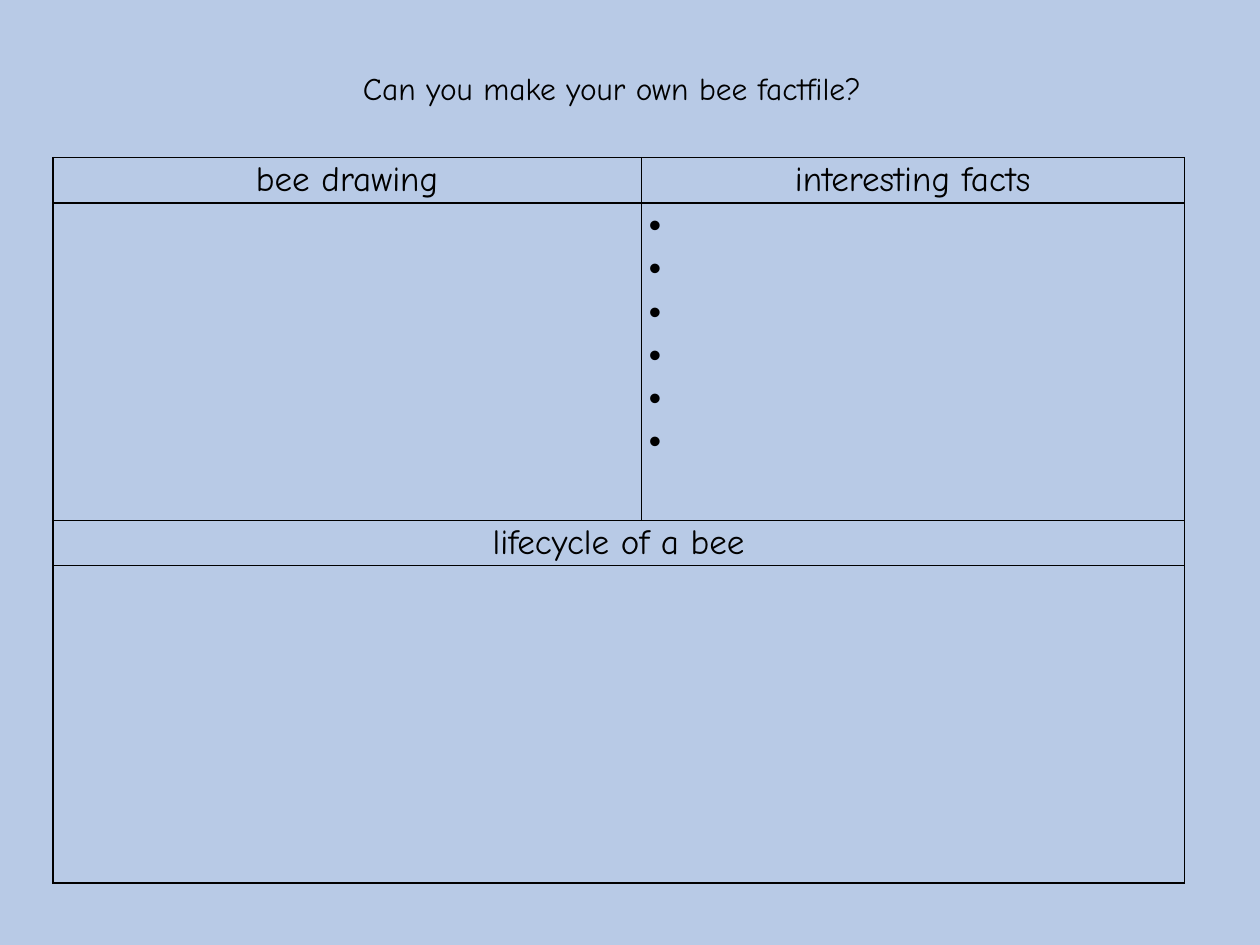
from lxml import etree
from pptx import Presentation
from pptx import util as u
from pptx.dml.color import RGBColor
from pptx.enum import text
from pptx.oxml import ns

TITLE = "Can you make your own bee factfile?"
HEADS = {(0, 0): "bee drawing", (0, 1): "interesting facts", (2, 0): "lifecycle of a bee"}
FACTS = (1, 1)
COUNT = 6
WIDE = (2, 3)
COLS = (4.67, 4.31)
ROWS = (0.36, 2.52) * 2
FONT = "Comic Neue"
BLUE = RGBColor(0xB8, 0xCA, 0xE6)
BLACK = RGBColor(0, 0, 0)


def style(para, size):
    para.font.size = u.Pt(size)
    para.font.name = FONT
    para.font.color.rgb = BLACK
    for run in para.runs:
        run.font.size = u.Pt(size)
        run.font.name = FONT
        run.font.color.rgb = BLACK


def add(root, tag, **attrs):
    return etree.SubElement(root, ns.qn(tag), attrs)


def border(cell):
    props = cell._tc.get_or_add_tcPr()
    for spot, side in enumerate("LRTB"):
        line = add(props, f"a:ln{side}", w=str(u.Pt(1)))
        add(add(line, "a:solidFill"), "a:srgbClr", val=str(BLACK))
        props.insert(spot, line)


def bullet(para):
    props = para._p.get_or_add_pPr()
    props.set("marL", str(u.Inches(0.25)))
    props.set("indent", str(-u.Inches(0.25)))
    add(props, "a:buFont", typeface="Arial")
    add(props, "a:buChar", char="•")


def heading(slide):
    title = slide.shapes.title
    title.left, title.top = u.Inches(2.83), u.Inches(0.5)
    title.width, title.height = u.Inches(5.08), u.Inches(0.4)
    frame = title.text_frame
    frame.text = TITLE
    frame.word_wrap = True
    frame.auto_size = text.MSO_AUTO_SIZE.NONE
    frame.vertical_anchor = text.MSO_ANCHOR.TOP
    frame.margin_left = frame.margin_right = u.Inches(0.05)
    frame.margin_top = frame.margin_bottom = u.Inches(0.05)
    para = frame.paragraphs[0]
    para.alignment = text.PP_ALIGN.LEFT
    para.line_spacing = 1.0
    style(para, 18)


def factfile(slide):
    table = slide.shapes.add_table(
        len(ROWS), len(COLS), u.Inches(0.42), u.Inches(1.25),
        u.Inches(sum(COLS)), u.Inches(sum(ROWS))).table
    table.first_row = table.horz_banding = False
    for col, width in zip(table.columns, COLS):
        col.width = u.Inches(width)
    for row, height in zip(table.rows, ROWS):
        row.height = u.Inches(height)
    for row in WIDE:
        table.cell(row, 0).merge(table.cell(row, 1))
    for row in range(len(ROWS)):
        for col in range(len(COLS)):
            cell = table.cell(row, col)
            cell.margin_left = cell.margin_right = u.Inches(0.06)
            cell.margin_top = cell.margin_bottom = 0
            cell.fill.background()
            border(cell)
            facts = (row, col) == FACTS
            cell.text = "\n".join([" "] * COUNT) if facts else HEADS.get((row, col), "")
            for para in cell.text_frame.paragraphs:
                para.line_spacing = 1.07
                para.alignment = text.PP_ALIGN.LEFT if facts else text.PP_ALIGN.CENTER
                if facts:
                    bullet(para)
                style(para, 20)


def main():
    deck = Presentation()
    deck.slide_width, deck.slide_height = u.Inches(10), u.Inches(7.5)
    slide = deck.slides.add_slide(deck.slide_layouts[5])
    fill = slide.background.fill
    fill.solid()
    fill.fore_color.rgb = BLUE
    factfile(slide)
    heading(slide)
    deck.save("out.pptx")


if __name__ == "__main__":
    main()
